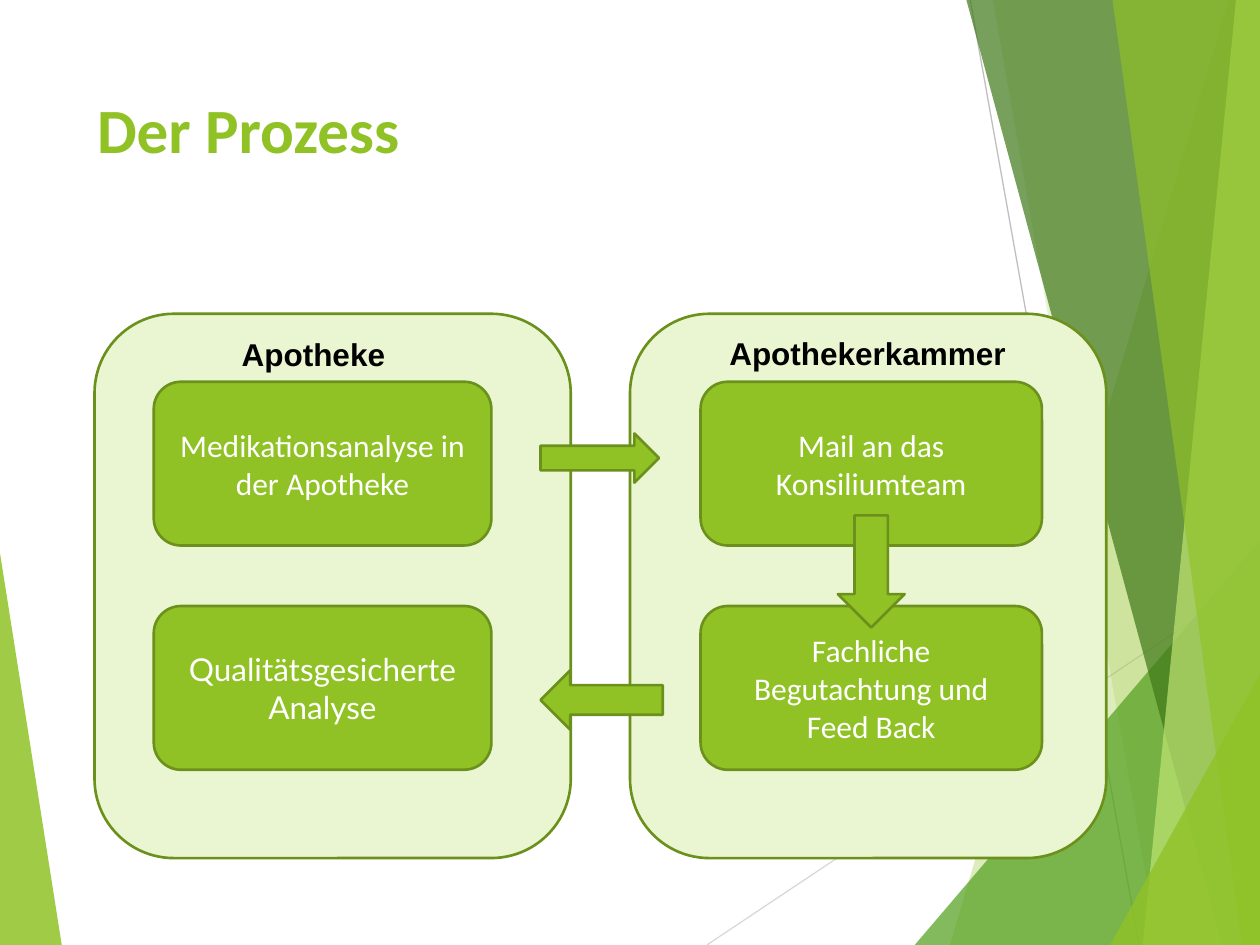
import pptx
import pptx.util
import pptx.dml.color
import pptx.enum.shapes
import pptx.enum.text
import pptx.oxml.ns
import pptx.oxml.xmlchemy

Inches = pptx.util.Inches
Pt = pptx.util.Pt
Shapes = pptx.enum.shapes.MSO_SHAPE
Anchor = pptx.enum.text.MSO_ANCHOR
Align = pptx.enum.text.PP_ALIGN
new_element = pptx.oxml.xmlchemy.OxmlElement

WIDTH, HEIGHT = 10, 7.5
THEME = {
    "lime": "90C226", "edge": "6B901C", "panel": "EAF6D1", "green": "54A021",
    "forest": "3F7819", "pale": "C0E474", "white": "FFFFFF", "black": "000000",
    "light_ray": "D9D9D9", "dark_ray": "BFBFBF",
    "title_size": 36, "text_size": 18, "outline": 1.5, "hairline": 0.75,
    "text_font": "Calibri", "label_font": "Arial", "accent_font": "Lato",
}

TITLE = "Der Prozess"
COLUMNS = [
    {"label": "Apotheke", "label_at": (1.82, 2.61, 2.44), "panel_left": 0.75,
     "step_left": 1.22, "step_width": 2.68,
     "steps": [("Medikationsanalyse in der Apotheke", "text_font"),
               ("Qualitätsgesicherte Analyse", "accent_font")]},
    {"label": "Apothekerkammer", "label_at": (5.69, 2.6, 2.6), "panel_left": 5,
     "step_left": 5.56, "step_width": 2.71,
     "steps": [("Mail an das Konsiliumteam", "text_font"),
               ("Fachliche Begutachtung und Feed Back", "text_font")]},
]
PANEL_TOP, PANEL_WIDTH, PANEL_HEIGHT = 2.49, 3.78, 4.32
STEP_TOP, STEP_PITCH, STEP_HEIGHT = 3.03, 1.78, 1.3
LABEL_HEIGHT = 0.4
ARROWS = [
    (Shapes.RIGHT_ARROW, (4.29, 3.44, 0.94, 0.39), 0),
    (Shapes.DOWN_ARROW, (6.65, 4.09, 0.53, 0.89), 0),
    (Shapes.RIGHT_ARROW, (4.29, 5.32, 0.97, 0.47), 180),
]

LEFT_FACET = ([(0, 4.39), (0.49, HEIGHT), (0, HEIGHT)], "lime", 85)
RAYS = [((5.61, HEIGHT), (WIDTH, 4.57), "light_ray"),
        ((7.7, 0), (9.04, HEIGHT), "dark_ray")]
RIGHT_FACETS = [
    ((9.75, 0), 7.54, "lime", 30),
    ((7.88, 0), 9.19, "lime", 20),
    ((WIDTH, 4.29), 7.26, "green", 72),
    ((7.67, 0), 9.7, "forest", 70),
    ((9.81, 0), 9.07, "pale", 70),
    ((8.83, 0), 9.86, "lime", 65),
    ((WIDTH, 5.35), 8.81, "lime", 80),
]


def rgb(name):
    return pptx.dml.color.RGBColor.from_string(THEME[name])


def assign(target, values):
    for attribute, value in values.items():
        setattr(target, attribute, value)


def paint(shape, fill, edge=None):
    shape.shadow.inherit = False
    shape.fill.solid()
    shape.fill.fore_color.rgb = rgb(fill)
    if edge:
        shape.line.color.rgb = rgb(edge)
        shape.line.width = Pt(THEME["outline"])
    else:
        shape.line.fill.background()


def write(shape, text, font, colour, size="text_size", bold=False,
          align=Align.LEFT, anchor=Anchor.TOP):
    frame = shape.text_frame
    assign(frame, {"text": text, "word_wrap": True, "vertical_anchor": anchor})
    paragraph = frame.paragraphs[0]
    paragraph.alignment = align
    assign(paragraph.runs[0].font,
           {"name": THEME[font], "size": Pt(THEME[size]), "bold": bold})
    paragraph.runs[0].font.color.rgb = rgb(colour)


def add_block(slide, kind, box, fill):
    block = slide.shapes.add_shape(kind, *map(Inches, box))
    paint(block, fill, "edge")
    return block


def add_facet(slide, corners, colour, opacity):
    points = [(Inches(x), Inches(y)) for x, y in corners]
    builder = slide.shapes.build_freeform(*points[0], scale=1.0)
    builder.add_line_segments(points[1:], close=True)
    facet = builder.convert_to_shape()
    paint(facet, colour)
    tint = facet._element.spPr.find(".//" + pptx.oxml.ns.qn("a:srgbClr"))
    alpha = new_element("a:alpha")
    alpha.set("val", str(opacity * 1000))
    tint.append(alpha)


def add_ray(slide, start, end, colour):
    ray = slide.shapes.add_connector(pptx.enum.shapes.MSO_CONNECTOR.STRAIGHT,
                                     *map(Inches, start + end))
    ray.line.color.rgb = rgb(colour)
    ray.line.width = Pt(THEME["hairline"])
    ray._element.spPr.append(new_element("a:effectLst"))


def add_background(slide):
    add_facet(slide, *LEFT_FACET)
    for ray in RAYS:
        add_ray(slide, *ray)
    for top, bottom, colour, opacity in RIGHT_FACETS:
        corners = [top, (bottom, HEIGHT), (WIDTH, HEIGHT)]
        if top[0] < WIDTH:
            corners.append((WIDTH, 0))
        add_facet(slide, corners, colour, opacity)


def add_process(slide):
    for column in reversed(COLUMNS):
        add_block(slide, Shapes.ROUNDED_RECTANGLE,
                  (column["panel_left"], PANEL_TOP, PANEL_WIDTH, PANEL_HEIGHT), "panel")
    for column in COLUMNS:
        for row, (text, font) in enumerate(column["steps"]):
            step = add_block(slide, Shapes.ROUNDED_RECTANGLE,
                             (column["step_left"], STEP_TOP + row * STEP_PITCH,
                              column["step_width"], STEP_HEIGHT), "lime")
            write(step, text, font, "white", align=Align.CENTER, anchor=Anchor.MIDDLE)
    for kind, box, rotation in ARROWS:
        add_block(slide, kind, box, "lime").rotation = rotation
    for column in COLUMNS:
        label = slide.shapes.add_textbox(
            *map(Inches, (*column["label_at"], LABEL_HEIGHT)))
        write(label, column["label"], "label_font", "black", bold=True)
        label.text_frame.auto_size = pptx.enum.text.MSO_AUTO_SIZE.SHAPE_TO_FIT_TEXT


def main():
    deck = pptx.Presentation()
    assign(deck, {"slide_width": Inches(WIDTH), "slide_height": Inches(HEIGHT)})
    slide = deck.slides.add_slide(deck.slide_layouts[5])
    add_background(slide)
    title = slide.shapes.title
    assign(title, {"left": Inches(0.67), "top": Inches(0.67),
                   "width": Inches(6.94), "height": Inches(1.44)})
    write(title, TITLE, "text_font", "lime", size="title_size", bold=True)
    add_process(slide)
    deck.save("out.pptx")


if __name__ == "__main__":
    main()
